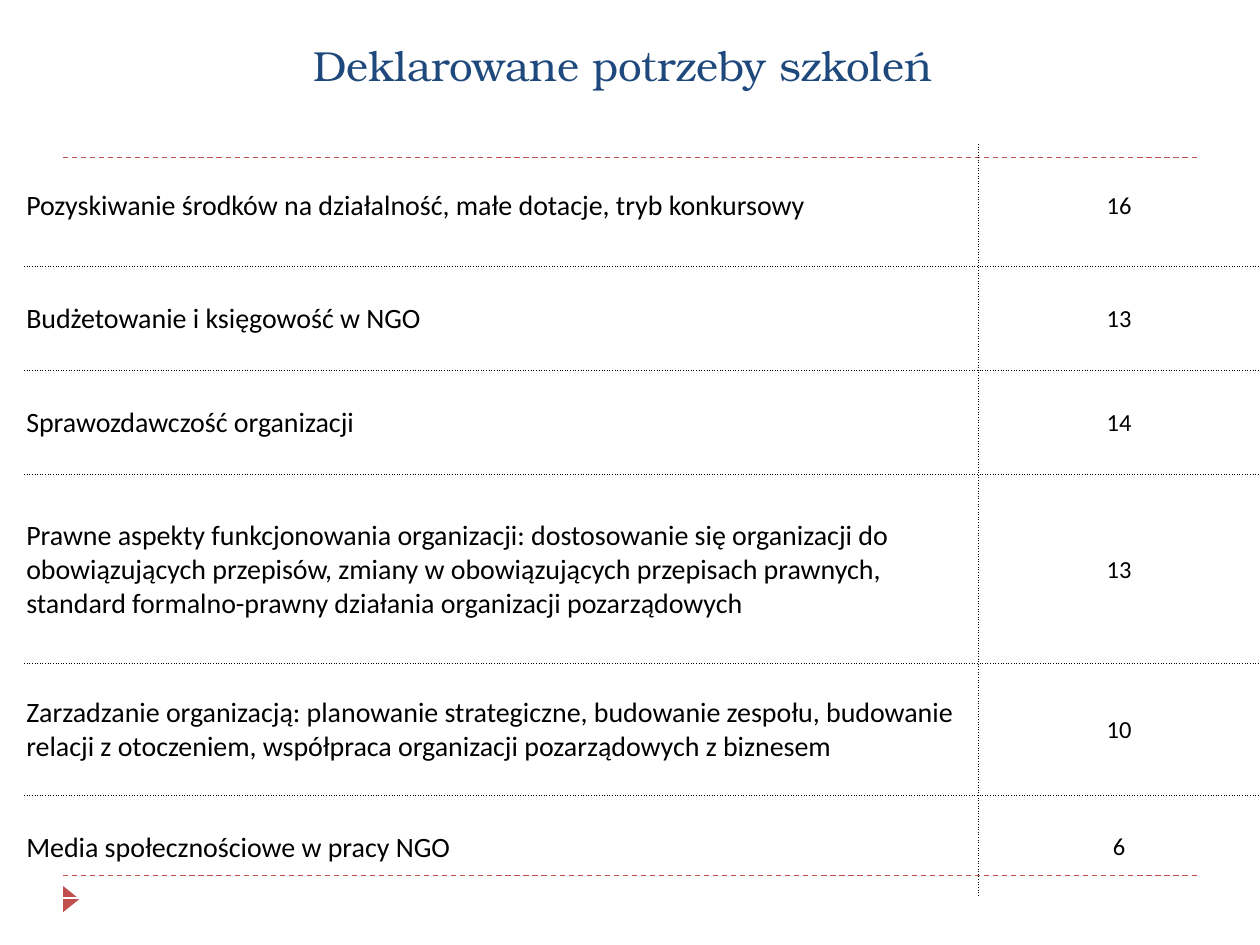
import pptx
import pptx.util
import pptx.dml.color
import pptx.enum.dml
import pptx.enum.shapes
import pptx.enum.text
import pptx.oxml
import pptx.oxml.ns
import lxml.etree

Cm, Pt = pptx.util.Cm, pptx.util.Pt
RGBColor = pptx.dml.color.RGBColor
ALIGN = pptx.enum.text.PP_ALIGN
ANCHOR = pptx.enum.text.MSO_ANCHOR
qn = pptx.oxml.ns.qn

BLACK = RGBColor(0x00, 0x00, 0x00)
WHITE = RGBColor(0xFF, 0xFF, 0xFF)
NAVY = RGBColor(0x1F, 0x49, 0x7D)
RED = RGBColor(0xC0, 0x50, 0x4D)

# Content: topic, votes, row height in cm
TITLE = "Deklarowane potrzeby szkoleń"
NEEDS = [
    ("Pozyskiwanie środków na działalność, małe dotacje, tryb konkursowy", 16, 2.45),
    ("Budżetowanie i księgowość w NGO", 13, 2.1),
    ("Sprawozdawczość organizacji", 14, 2.1),
    ("Prawne aspekty funkcjonowania organizacji: dostosowanie się organizacji do "
     "obowiązujących przepisów, zmiany w obowiązujących przepisach prawnych, "
     "standard formalno-prawny działania organizacji pozarządowych", 13, 3.8),
    ("Zarzadzanie organizacją: planowanie strategiczne, budowanie zespołu, budowanie "
     "relacji z otoczeniem, współpraca organizacji pozarządowych z biznesem", 10, 2.67),
    ("Media społecznościowe w pracy NGO", 6, 2.06),
]
WIDTHS = (19.23, 5.66)
STYLES = ((16, ALIGN.LEFT), (14, ALIGN.CENTER))
RULES = (17.65, 3.18)


def write(frame, text, size, font, color, align):
    para = frame.paragraphs[0]
    para.alignment = align
    run = para.add_run()
    run.text = text
    run.font.size = Pt(size)
    run.font.name = font
    run.font.color.rgb = color


def border(cell, side, inner):
    """Dotted black between cells, plain white on the outside."""
    props = cell._tc.get_or_add_tcPr()
    line = lxml.etree.SubElement(props, qn("a:ln" + side))
    line.set("w", str(Pt(0.75 if inner else 1)))
    fill = lxml.etree.SubElement(line, qn("a:solidFill"))
    color = lxml.etree.SubElement(fill, qn("a:srgbClr"))
    color.set("val", str(BLACK if inner else WHITE))
    dash = lxml.etree.SubElement(line, qn("a:prstDash"))
    dash.set("val", "sysDot" if inner else "solid")


def main():
    deck = pptx.Presentation()
    deck.slide_width, deck.slide_height = Cm(25.4), Cm(19.05)
    slide = deck.slides.add_slide(deck.slide_layouts[6])
    shapes = slide.shapes

    # Dashed rules
    for y in RULES:
        rule = shapes.add_connector(pptx.enum.shapes.MSO_CONNECTOR.STRAIGHT,
                                    Cm(1.27), Cm(y), Cm(24.13), Cm(y))
        rule.line.color.rgb = RED
        rule.line.width = Pt(0.75)
        rule.line.dash_style = pptx.enum.dml.MSO_LINE.DASH
        lxml.etree.SubElement(rule._element.spPr, qn("a:effectLst"))

    # Corner marker
    mark = shapes.add_shape(pptx.enum.shapes.MSO_SHAPE.ISOSCELES_TRIANGLE,
                            Cm(1.17), Cm(17.96), Cm(0.53), Cm(0.33))
    mark.rotation = 90
    mark.shadow.inherit = False
    mark.fill.solid()
    mark.fill.fore_color.rgb = RED
    mark.line.fill.background()

    # Title
    frame = shapes.add_textbox(0, Cm(0.43), Cm(25.1), Cm(1.5)).text_frame
    frame.word_wrap = True
    frame.vertical_anchor = ANCHOR.BOTTOM
    write(frame, TITLE, 24, "TeX Gyre Bonum", NAVY, ALIGN.CENTER)

    # Table of needs
    rows, cols = len(NEEDS), len(WIDTHS)
    high = sum(need[2] for need in NEEDS)
    table = shapes.add_table(rows, cols, Cm(0.5), Cm(2.92),
                             Cm(sum(WIDTHS)), Cm(high)).table
    table.first_row = table.horz_banding = False
    for col, width in zip(table.columns, WIDTHS):
        col.width = Cm(width)
    for r, (topic, votes, height) in enumerate(NEEDS):
        table.rows[r].height = Cm(height)
        for c, text in enumerate((topic, str(votes))):
            cell = table.cell(r, c)
            cell.margin_left = cell.margin_right = cell.margin_top = Cm(0.03)
            cell.margin_bottom = 0
            cell.vertical_anchor = ANCHOR.MIDDLE
            size, align = STYLES[c]
            write(cell.text_frame, text, size, "Calibri", BLACK, align)
            for side, inner in (("L", c > 0), ("R", c < cols - 1),
                                ("T", r > 0), ("B", r < rows - 1)):
                border(cell, side, inner)
            cell.fill.background()

    deck.save("out.pptx")


if __name__ == "__main__":
    main()
